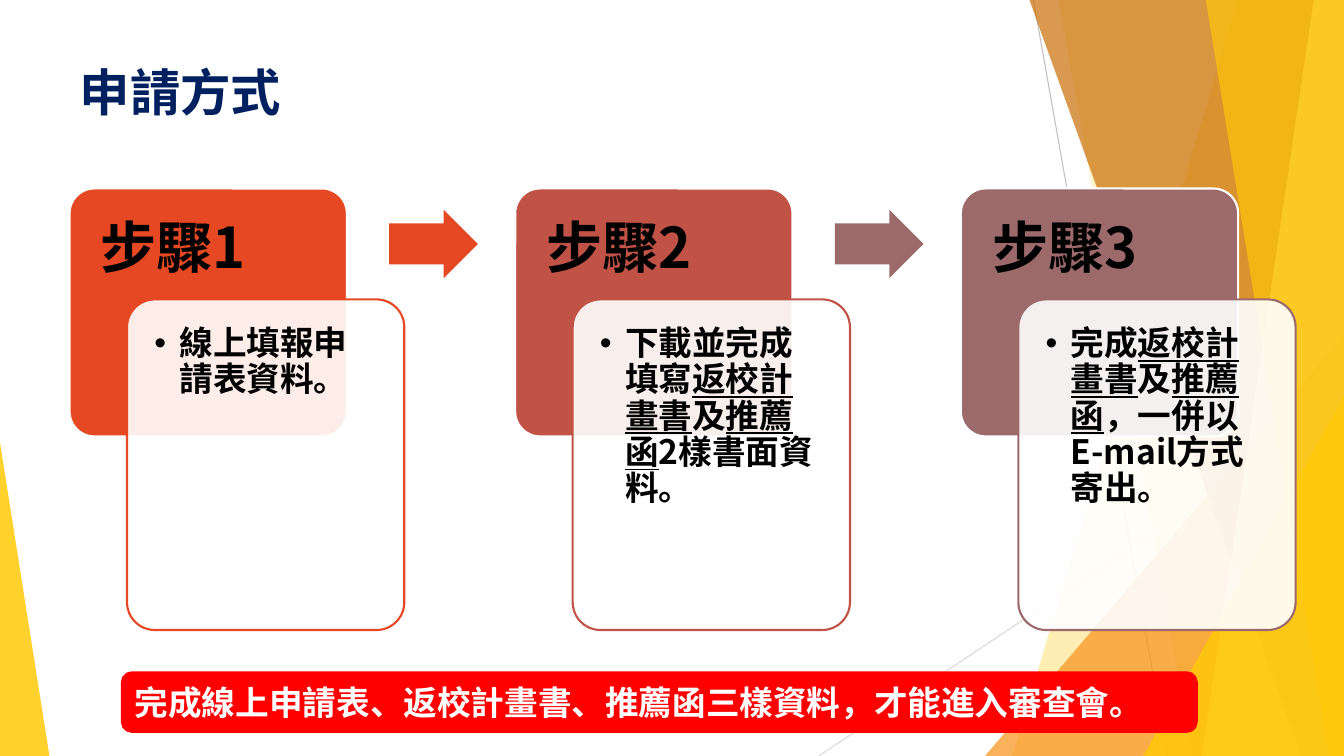
import pptx
import pptx.dml.color
import pptx.enum.shapes
import pptx.enum.text
import pptx.oxml.ns
import pptx.util
from lxml import etree
from pptx.util import Inches

FONT = "Noto Sans CJK SC"
SHAPE = pptx.enum.shapes.MSO_SHAPE
COLORS = {
    "navy": "002060", "black": "000000", "white": "FFFFFF", "red": "FF0000",
    "vermilion": "E64823", "brick": "C15246", "mauve": "9C6A6A",
    "gold": "FFCA08", "pale gold": "FFDF6B", "orange": "F8931D",
    "brown": "CA6F06", "grey": "BFBFBF", "light grey": "D9D9D9",
}
STEP_PITCH = 4.42
# Each phrase is (text, underlined).
STEPS = [
    ("步驟1", "vermilion", [("線上填報申請表資料。", False)]),
    ("步驟2", "brick", [("下載並完成填寫", False), ("返校計畫書", True), ("及", False),
                      ("推薦函", True), ("2樣書面資料。", False)]),
    ("步驟3", "mauve", [("完成", False), ("返校計畫書", True), ("及", False),
                      ("推薦函", True), ("，一併以E-mail方式寄出。", False)]),
]
ARROW_COLORS = ["vermilion", "mauve"]


def rgb(color):
    return pptx.dml.color.RGBColor.from_string(COLORS[color])


def add_element(parent, tag, **attributes):
    element = etree.SubElement(parent, pptx.oxml.ns.qn(tag))
    for name, value in attributes.items():
        element.set(name, str(value))
    return element


def paint(shape, fill, opacity=100, line=None):
    """Apply a flat fill, with an opacity in percent, and an optional outline."""
    shape.shadow.inherit = False
    shape.fill.solid()
    shape.fill.fore_color.rgb = rgb(fill)
    if opacity < 100:
        color = shape.fill._xPr.find(".//" + pptx.oxml.ns.qn("a:srgbClr"))
        add_element(color, "a:alpha", val=opacity * 1000)
    if line:
        shape.line.color.rgb = rgb(line)
        shape.line.width = pptx.util.Pt(1.5)
    else:
        shape.line.fill.background()


def add_preset(slide, preset, box, adjustments, fill, opacity=100, line=None):
    shape = slide.shapes.add_shape(preset, *map(Inches, box))
    for index, value in enumerate(adjustments):
        shape.adjustments[index] = value
    paint(shape, fill, opacity, line)
    return shape


def add_facet(slide, top_left, bottom_left, fill, opacity):
    """Draw a band from a slanted left edge to the right edge of the slide."""
    builder = slide.shapes.build_freeform(Inches(top_left), 0)
    corners = [(13.33, 0), (13.33, 7.5), (bottom_left, 7.5)]
    builder.add_line_segments([(Inches(x), Inches(y)) for x, y in corners])
    paint(builder.convert_to_shape(), fill, opacity)


def add_hairline(slide, start, end, color):
    line = slide.shapes.add_connector(
        pptx.enum.shapes.MSO_CONNECTOR.STRAIGHT, *map(Inches, start + end))
    line.line.color.rgb = rgb(color)
    line.line.width = pptx.util.Pt(0.75)
    add_element(line._element.spPr, "a:effectLst")


def write(paragraph, phrases, size, color):
    for text, underlined in phrases:
        run = paragraph.add_run()
        run.text = text
        if underlined:
            run.font.underline = True
    paragraph.alignment = pptx.enum.text.PP_ALIGN.LEFT
    font = paragraph.font
    font.name, font.size, font.bold = FONT, pptx.util.Pt(size), True
    font.color.rgb = rgb(color)
    add_element(font._rPr, "a:ea", typeface=FONT)


def add_text(slide, box, insets, phrases, size, bulleted=False):
    frame = slide.shapes.add_textbox(*map(Inches, box)).text_frame
    frame.word_wrap = True
    (frame.margin_left, frame.margin_top,
     frame.margin_right, frame.margin_bottom) = map(Inches, insets)
    paragraph = frame.paragraphs[0]
    paragraph.line_spacing = 0.9
    if bulleted:
        properties = paragraph._p.get_or_add_pPr()
        properties.set("marL", str(Inches(0.25)))
        properties.set("indent", str(Inches(-0.25)))
        add_element(properties, "a:buFont", typeface="Arial")
        add_element(properties, "a:buChar", char="•")
    write(paragraph, phrases, size, "black")


def add_backdrop(slide):
    add_hairline(slide, (10.25, 0), (11.58, 7.5), "grey")
    add_hairline(slide, (13.33, 4.03), (8.12, 7.5), "light grey")
    add_facet(slide, 12.28, 10.04, "gold", 30)
    add_facet(slide, 10.5, 11.83, "gold", 20)
    triangle = SHAPE.ISOSCELES_TRIANGLE
    add_preset(slide, triangle, (9.77, 3.33, 3.56, 4.17), [1], "orange", 72)
    add_facet(slide, 10.21, 12.91, "brown", 70)
    add_facet(slide, 13.03, 11.92, "pale gold", 70)
    add_facet(slide, 11.96, 13.18, "gold", 65)
    add_preset(slide, triangle, (11.34, 3.93, 1.99, 3.57), [1], "gold", 80)
    add_preset(slide, triangle, (0, 4.39, 0.49, 3.11), [0], "gold", 85)


def add_title(slide, text):
    title = slide.shapes.title
    title.left, title.top, title.width, title.height = map(
        Inches, (0.69, 0.56, 6.96, 1.08))
    title.text_frame.vertical_anchor = pptx.enum.text.MSO_ANCHOR.TOP
    write(title.text_frame.paragraphs[0], [(text, False)], 36, "navy")


def add_step(slide, left, heading, color, phrases):
    rounded = SHAPE.ROUNDED_RECTANGLE
    add_preset(slide, rounded, (left, 1.87, 2.75, 2.46), [0.1], color, line="white")
    add_text(slide, (left, 1.87, 2.75, 1.1), (0.31, 0.31, 0.31, 0.17),
             [(heading, False)], 40)
    add_preset(slide, rounded, (left + 0.57, 2.97, 2.75, 3.28), [0.1],
               "white", 90, color)
    add_text(slide, (left + 0.65, 3.05, 2.59, 3.11), [0.19] * 4,
             phrases, 24, bulleted=True)


def add_reminder(slide, text):
    banner = add_preset(slide, SHAPE.ROUNDED_RECTANGLE, (1.21, 6.67, 10.66, 0.59),
                        [], "red", line="red")
    banner.text_frame.vertical_anchor = pptx.enum.text.MSO_ANCHOR.MIDDLE
    write(banner.text_frame.paragraphs[0], [(text, False)], 24, "white")


def main():
    deck = pptx.Presentation()
    deck.slide_width, deck.slide_height = Inches(13.33), Inches(7.5)
    slide = deck.slides.add_slide(deck.slide_layouts.get_by_name("Title Only"))
    add_backdrop(slide)
    add_title(slide, "申請方式")
    for index, step in enumerate(STEPS):
        add_step(slide, 0.69 + index * STEP_PITCH, *step)
    for index, color in enumerate(ARROW_COLORS):
        add_preset(slide, SHAPE.RIGHT_ARROW,
                   (3.86 + index * STEP_PITCH, 2.08, 0.88, 0.68), [0.6, 0.5], color)
    add_reminder(slide, "完成線上申請表、返校計畫書、推薦函三樣資料，才能進入審查會。")
    deck.save("out.pptx")


if __name__ == "__main__":
    main()
